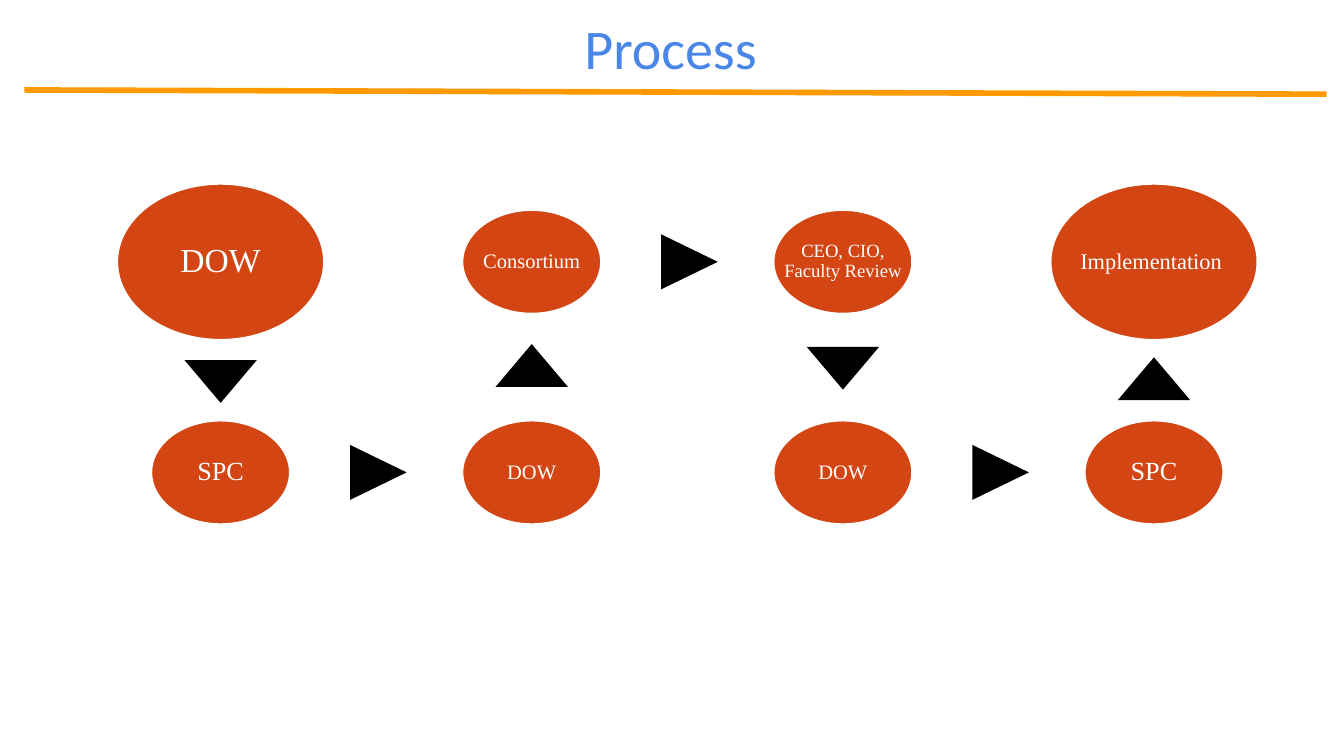
from lxml.etree import SubElement
from pptx import Presentation
from pptx.dml.color import RGBColor
from pptx.enum.shapes import MSO_CONNECTOR, MSO_SHAPE
from pptx.enum.text import MSO_ANCHOR, PP_ALIGN
from pptx.oxml.ns import qn
from pptx.util import Cm, Pt

COLORS = {
    "title": "4A86E8",
    "rule": "FF9900",
    "step": "D34614",
    "arrow": "000000",
    "white": "FFFFFF",
}

# Grid of step centres, in centimetres
FIRST_COLUMN, COLUMN_PITCH = 4.17, 5.88
TOP_ROW, BOTTOM_ROW = 4.95, 8.93
LARGE, SMALL = (3.91, 2.95), (2.62, 1.96)
VERTICAL_ARROW, SIDE_ARROW = (1.37, 0.81), (1.04, 1.07)
UP, RIGHT, DOWN = 0, 90, 180


def column(number):
    return FIRST_COLUMN + number * COLUMN_PITCH


def centered(x, y, size):
    width, height = size
    return Cm(x - width / 2), Cm(y - height / 2), Cm(width), Cm(height)


class ProcessSlide:
    def __init__(self, page):
        self.page = page

    def color(self, name):
        return RGBColor.from_string(COLORS[name])

    def text(self, frame, words, font, size, color, inset):
        box = self.page.shapes.add_textbox(*frame)
        text_frame = box.text_frame
        text_frame.word_wrap = True
        text_frame.margin_left = text_frame.margin_right = Cm(inset)
        text_frame.margin_top = text_frame.margin_bottom = Cm(inset)
        para = text_frame.paragraphs[0]
        para.text = words
        para.alignment = PP_ALIGN.CENTER
        para.font.name = font
        para.font.size = Pt(size)
        para.font.color.rgb = self.color(color)
        return text_frame

    def rule(self, x1, y1, x2, y2):
        line = self.page.shapes.add_connector(
            MSO_CONNECTOR.STRAIGHT, Cm(x1), Cm(y1), Cm(x2), Cm(y2))
        line.line.color.rgb = self.color("rule")
        line.line.width = Pt(3)
        SubElement(line._element.spPr, qn("a:effectLst"))

    def shape(self, kind, frame, fill):
        shape = self.page.shapes.add_shape(kind, *frame)
        shape.shadow.inherit = False
        shape.fill.solid()
        shape.fill.fore_color.rgb = self.color(fill)
        return shape

    def step(self, x, y, size, words, font_size):
        frame = centered(x, y, size)
        oval = self.shape(MSO_SHAPE.OVAL, frame, "step")
        oval.line.color.rgb = self.color("white")
        oval.line.width = Pt(1)
        # The label uses the full width of the oval
        label = self.text(frame, words, "Times New Roman", font_size, "white", 0.05)
        label.vertical_anchor = MSO_ANCHOR.MIDDLE
        para = label.paragraphs[0]
        para.line_spacing = 0.9
        para.space_after = Pt(4.5 if size == LARGE else 3.9)

    def arrow(self, x, y, direction):
        size = SIDE_ARROW if direction == RIGHT else VERTICAL_ARROW
        triangle = self.shape(
            MSO_SHAPE.ISOSCELES_TRIANGLE, centered(x, y, size), "arrow")
        triangle.line.fill.background()
        triangle.rotation = direction


def main():
    deck = Presentation()
    deck.slide_width, deck.slide_height = Cm(25.4), Cm(14.29)
    slide = ProcessSlide(deck.slides.add_slide(deck.slide_layouts[6]))

    # Title and rule
    slide.text((Cm(3.86), Cm(0), Cm(17.63), Cm(3)),
               "Process", "Calibri", 30, "title", 0.25)
    slide.rule(0.46, 1.7, 25.07, 1.78)

    # Steps, in process order
    steps = [
        (0, TOP_ROW, LARGE, "DOW", 18),
        (0, BOTTOM_ROW, SMALL, "SPC", 14),
        (1, BOTTOM_ROW, SMALL, "DOW", 11),
        (1, TOP_ROW, SMALL, "Consortium", 11),
        (2, TOP_ROW, SMALL, "CEO, CIO, Faculty Review", 10),
        (2, BOTTOM_ROW, SMALL, "DOW", 11),
        (3, BOTTOM_ROW, SMALL, "SPC", 14),
        (3, TOP_ROW, LARGE, "Implementation ", 12),
    ]
    for number, y, size, words, font_size in steps:
        slide.step(column(number), y, size, words, font_size)

    # Arrows within the columns
    vertical_arrows = [(7.21, DOWN), (6.91, UP), (6.96, DOWN), (7.16, UP)]
    for number, (y, direction) in enumerate(vertical_arrows):
        slide.arrow(column(number), y, direction)

    # Arrows between the columns
    for number, y in enumerate([BOTTOM_ROW, TOP_ROW, BOTTOM_ROW]):
        slide.arrow(column(number + 0.5) + 0.04, y, RIGHT)

    deck.save("out.pptx")


if __name__ == "__main__":
    main()
